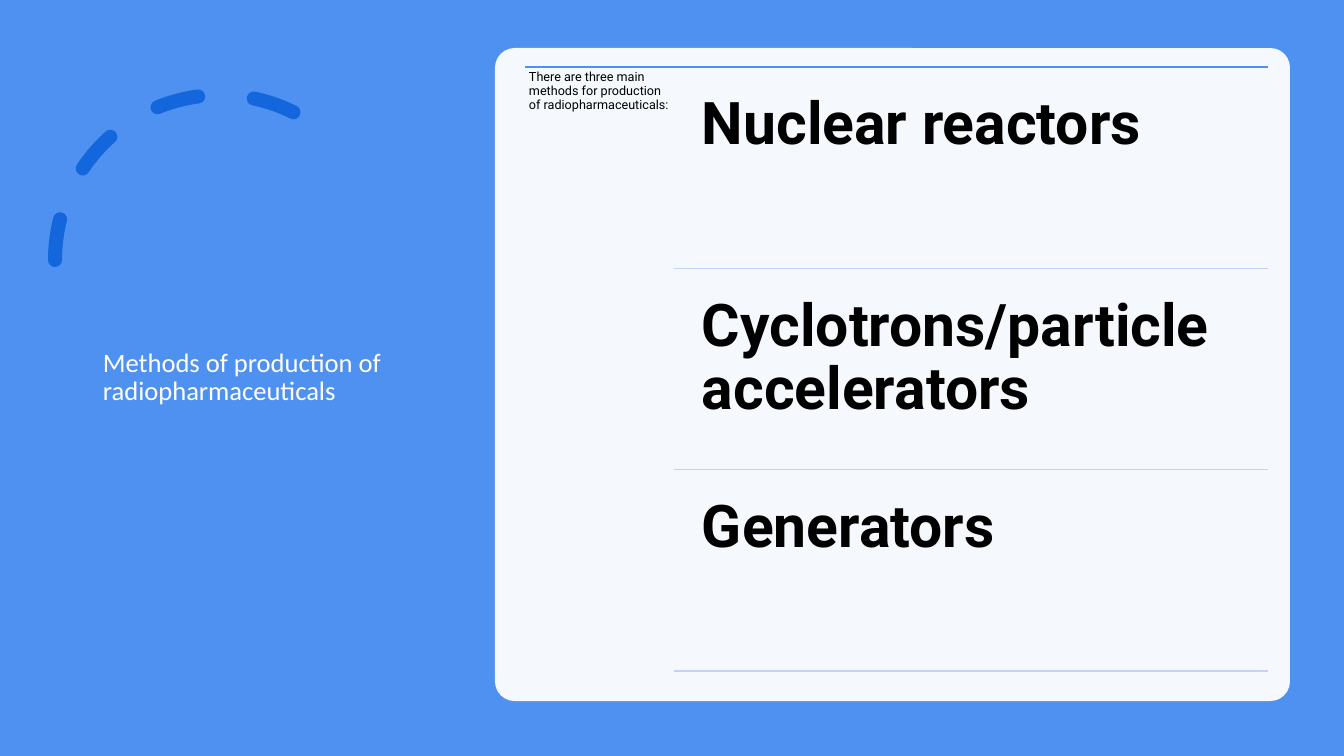
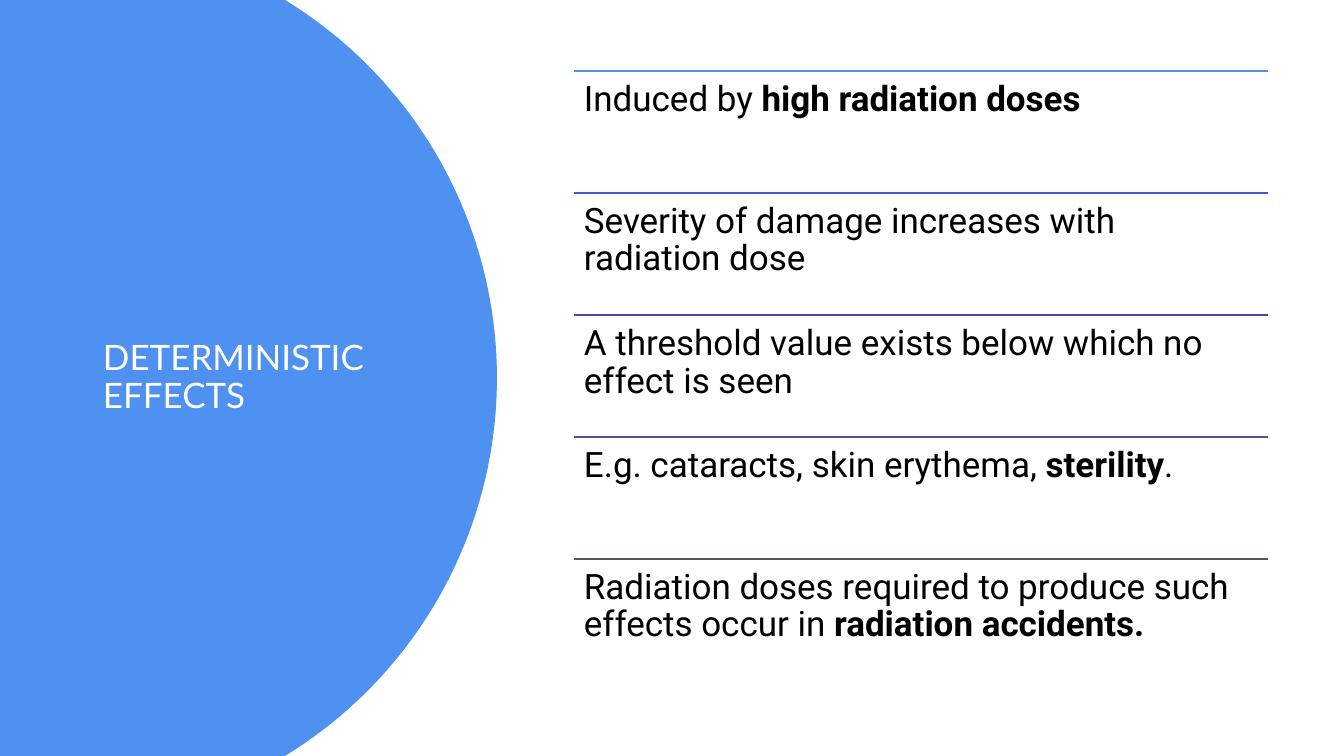
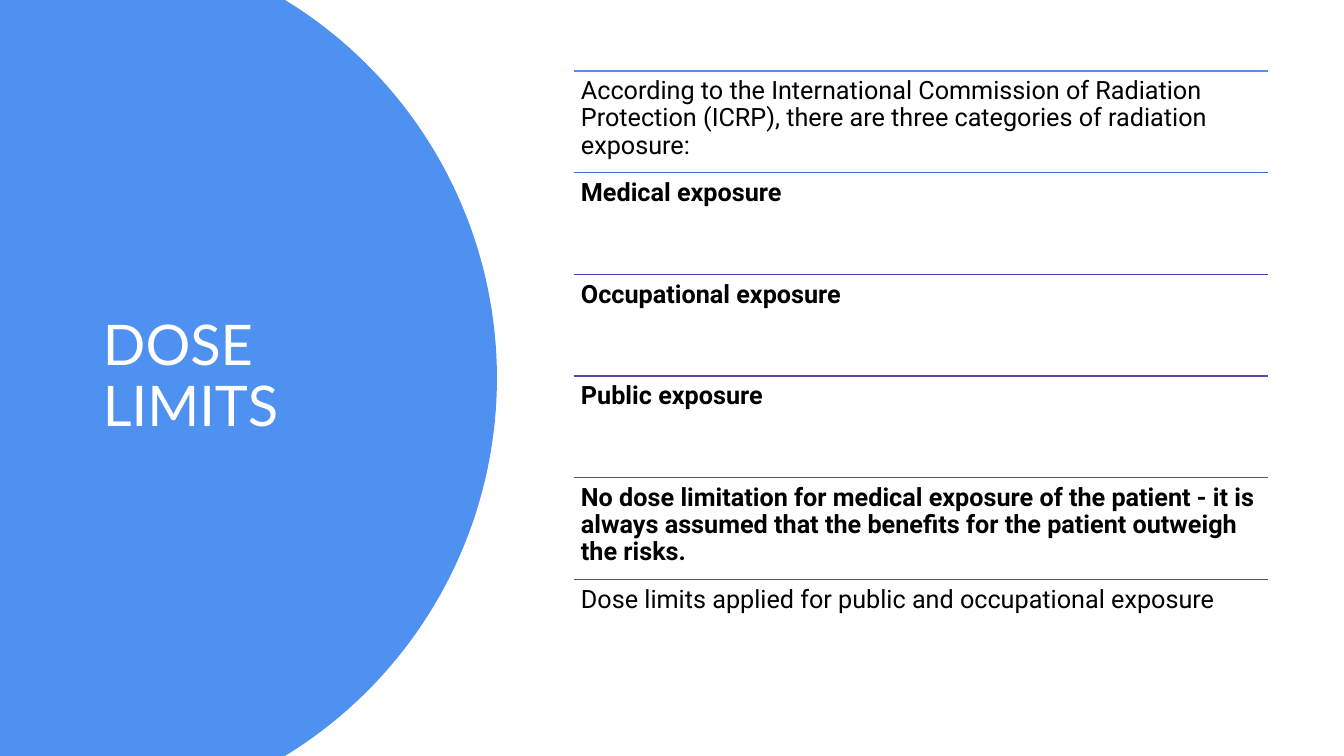
"""Build three slides on radiopharmaceuticals and radiation protection."""
from dataclasses import dataclass
from math import asin, cos, sin

from lxml.etree import SubElement
from pptx import Presentation
from pptx.dml.color import RGBColor
from pptx.enum.dml import MSO_LINE
from pptx.enum.shapes import MSO_CONNECTOR, MSO_SHAPE as SHAPE
from pptx.enum.text import MSO_ANCHOR as ANCHOR, MSO_AUTO_SIZE, PP_ALIGN
from pptx.oxml.ns import qn
from pptx.util import Pt

METHODS_TITLE = "Methods of production of radiopharmaceuticals"
METHODS_INTRO = "There are three main methods for production of radiopharmaceuticals:"
METHODS = ["Nuclear reactors", "Cyclotrons/particle accelerators", "Generators"]

# Each row: rule colour, then (text, bold) spans.
EFFECTS = [
    ("4E91F0", [("Induced by ", False), ("high radiation doses", True)]),
    ("435AD8", [("Severity of damage increases with radiation dose", False)]),
    ("5043B5", [("A threshold value exists below which no effect is seen", False)]),
    ("644E87", [("E.g. cataracts, skin erythema, ", False), ("sterility", True), (".", False)]),
    ("5B5260", [("Radiation doses required to produce such effects occur in ", False),
                ("radiation accidents.", True)]),
]
LIMITS = [
    ("4E91F0", [("According to the International Commission of Radiation Protection (ICRP), "
                 "there are three categories of radiation exposure:", False)]),
    ("4564DD", [("Medical exposure", True)]),
    ("4240C6", [("Occupational exposure", True)]),
    ("5C48A2", [("Public exposure", True)]),
    ("644F7F", [("No dose limitation for medical exposure of the patient - it is always assumed "
                 "that the benefits for the patient outweigh the risks.", True)]),
    ("5B5260", [("Dose limits applied for public and occupational exposure", False)]),
]
ROW_SLIDES = [
    dict(title="DETERMINISTIC EFFECTS", title_size=25, rows=EFFECTS, size=25, inset=10),
    dict(title="DOSE LIMITS", title_size=40, rows=LIMITS, size=18, inset=7),
]


@dataclass(frozen=True)
class Theme:
    """Colours, fonts and type sizes of the deck."""
    blue: str = "4E91F0"
    dark_blue: str = "1366DC"
    pale_blue: str = "C2D2F8"
    white: str = "FFFFFF"
    black: str = "000000"
    body_font: str = "Roboto"
    title_font: str = "Lato"
    methods_title_font: str = "Calibri"
    methods_title: int = 19
    intro: int = 9
    method: int = 42


THEME = Theme()
WIDTH, HEIGHT = 1344, 756
RIGHT = 1268


def px(length):
    """Turn pixels into EMU."""
    return round(length * 914400 / 100.8)


def rgb(code):
    """Turn a hex code into a colour."""
    return RGBColor.from_string(code)


def write(shape, spans, *, size, font=THEME.body_font, color=THEME.black, inset=10,
          anchor=ANCHOR.TOP):
    """Fill a shape with one left-aligned paragraph of (text, bold) spans."""
    frame = shape.text_frame
    frame.word_wrap = True
    frame.auto_size = MSO_AUTO_SIZE.NONE
    frame.vertical_anchor = anchor
    frame.margin_left = frame.margin_right = px(inset)
    frame.margin_top = frame.margin_bottom = px(inset)
    para = frame.paragraphs[0]
    para.alignment = PP_ALIGN.LEFT
    para.line_spacing = 0.9
    para.space_before = Pt(0)
    for text, bold in spans:
        span = para.add_run()
        span.text = text
        span.font.name, span.font.size, span.font.bold = font, Pt(size), bold
        span.font.color.rgb = rgb(color)


def add_text(page, left, top, width, height, spans, **style):
    """Add a text box."""
    box = page.shapes.add_textbox(px(left), px(top), px(width), px(height))
    write(box, spans, **style)


def add_rule(page, left, top, color):
    """Draw a horizontal rule that ends at the right margin."""
    rule = page.shapes.add_connector(MSO_CONNECTOR.STRAIGHT, px(left), px(top), px(RIGHT), px(top))
    rule.line.color.rgb = rgb(color)
    rule.line.width = Pt(1)
    SubElement(rule.element.spPr, qn("a:effectLst"))


def paint(shape, color):
    """Give a shape a flat fill without outline or shadow."""
    shape.shadow.inherit = False
    shape.fill.solid()
    shape.fill.fore_color.rgb = rgb(color)
    shape.line.fill.background()


def add_page(deck, title, size, font, background):
    """Add a title-only slide with the shared title place and style."""
    page = deck.slides.add_slide(deck.slide_layouts[5])
    page.background.fill.solid()
    page.background.fill.fore_color.rgb = rgb(background)
    box = page.shapes.title
    box.left, box.top, box.width, box.height = px(93), px(71), px(326), px(614)
    write(box, [(title, False)], size=size, font=font, color=THEME.white, anchor=ANCHOR.MIDDLE)
    return page


def add_dashed_arc(page):
    """Draw the dashed arc above the title."""
    arc = page.shapes.add_shape(SHAPE.ARC, px(55), px(95), px(330), px(330))
    arc.shadow.inherit = False
    arc.adjustments[0], arc.adjustments[1] = 146.13, 0
    arc.element.spPr.find(qn("a:xfrm")).set("flipH", "1")
    arc.fill.background()
    arc.line.color.rgb = rgb(THEME.dark_blue)
    arc.line.width = Pt(10)
    arc.line.dash_style = MSO_LINE.DASH
    arc.element.spPr.find(qn("a:ln")).set("cap", "rnd")


def add_card(page):
    """Draw the translucent rounded card."""
    card = page.shapes.add_shape(SHAPE.ROUNDED_RECTANGLE, px(495), px(48), px(795), px(653))
    card.adjustments[0] = 0.03
    paint(card, THEME.white)
    color = card.element.spPr.find(qn("a:solidFill"))[0]
    SubElement(color, qn("a:alpha"), val="95000")


def add_side_disc(page, center=54, radius=443, steps=80):
    """Draw the part of a large disc on the left, behind the title."""
    half = asin(HEIGHT / 2 / radius)
    angles = [half * (2 * step / steps - 1) for step in range(steps + 1)]
    edge = [(px(center + radius * cos(angle)), px(HEIGHT / 2 + radius * sin(angle)))
            for angle in angles]
    builder = page.shapes.build_freeform(0, 0)
    builder.add_line_segments(edge + [(0, px(HEIGHT))], close=True)
    disc = builder.convert_to_shape()
    paint(disc, THEME.blue)
    page.shapes.title.element.addprevious(disc.element)


def add_methods_page(deck):
    """Build the slide with the intro column and the three methods."""
    page = add_page(deck, METHODS_TITLE, THEME.methods_title, THEME.methods_title_font, THEME.blue)
    add_dashed_arc(page)
    add_card(page)
    left, top = 525, 67
    pitch = 604 / len(METHODS)
    add_rule(page, left, top, THEME.blue)
    add_text(page, left, top, 149, 614, [(METHODS_INTRO, False)], size=THEME.intro, inset=4)
    for index, method in enumerate(METHODS):
        row_top = top + index * pitch
        add_text(page, 685, row_top + 10, RIGHT - 685, pitch - 10, [(method, True)],
                 size=THEME.method, inset=17)
        add_rule(page, 674, row_top + pitch, THEME.pale_blue)


def add_rows_page(deck, title, title_size, rows, size, inset):
    """Build a slide with the side disc and evenly spaced ruled rows."""
    page = add_page(deck, title, title_size, THEME.title_font, THEME.white)
    add_side_disc(page)
    left, top = 574, 71
    pitch = 610 / len(rows)
    for index, (color, spans) in enumerate(rows):
        row_top = top + index * pitch
        add_rule(page, left, row_top, color)
        add_text(page, left, row_top, RIGHT - left, pitch, spans, size=size, inset=inset)


def main():
    """Build and save the deck."""
    deck = Presentation()
    deck.slide_width, deck.slide_height = px(WIDTH), px(HEIGHT)
    add_methods_page(deck)
    for content in ROW_SLIDES:
        add_rows_page(deck, **content)
    deck.save("out.pptx")


if __name__ == "__main__":
    main()
